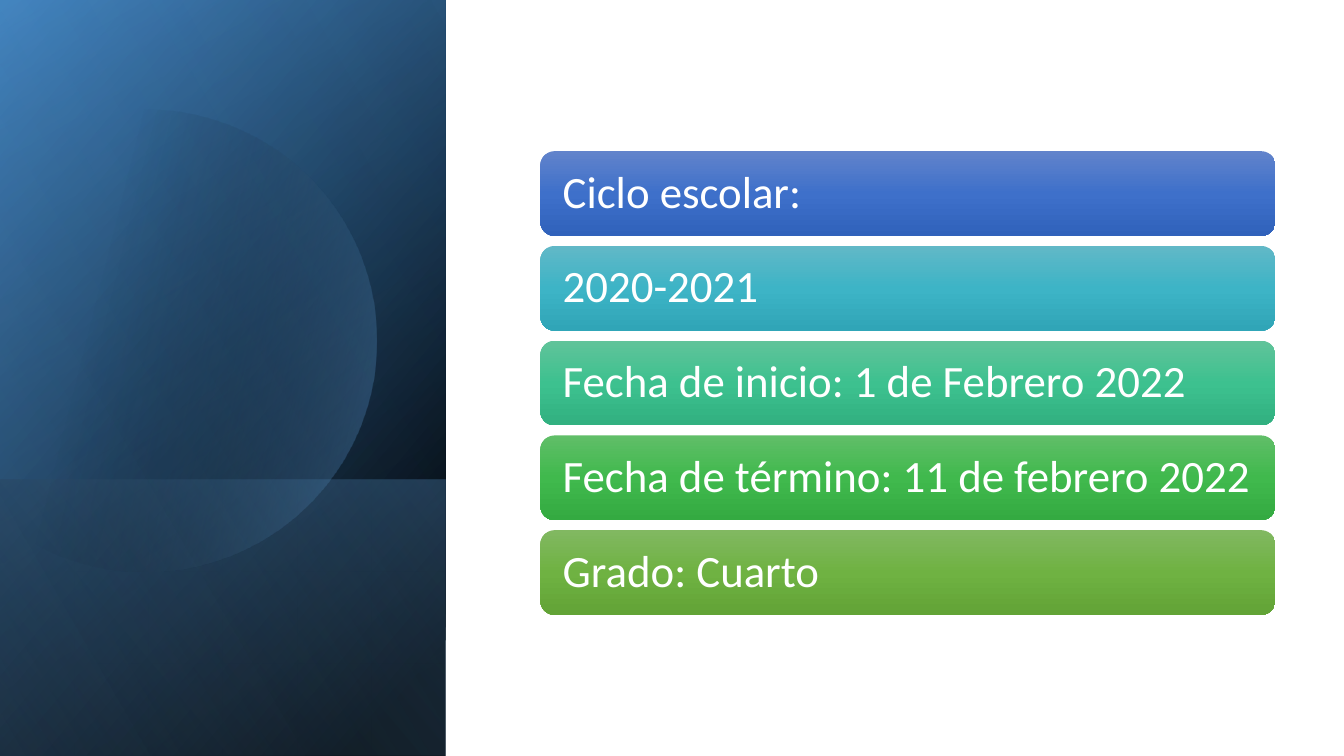
import math
from lxml import etree
from pptx import Presentation
from pptx.dml.color import RGBColor
from pptx.enum.shapes import MSO_SHAPE
from pptx.enum.text import MSO_ANCHOR, PP_ALIGN
from pptx.oxml.ns import qn
from pptx.util import Inches, Pt

RECT, ROUNDED = MSO_SHAPE.RECTANGLE, MSO_SHAPE.ROUNDED_RECTANGLE
MIDDLE, LEFT = MSO_ANCHOR.MIDDLE, PP_ALIGN.LEFT

# Content: bar text and its gradient colours, top to bottom
BARS = [
    ("Ciclo escolar:", ("6183CB", "3E70CA", "3062BB")),
    ("2020-2021", ("61B8C7", "3DB4C6", "30A5B7")),
    ("Fecha de inicio: 1 de Febrero 2022", ("60C39A", "3DC18F", "31B080")),
    ("Fecha de término: 11 de febrero 2022", ("60BE68", "40B94D", "34AA41")),
    ("Grado: Cuarto", ("81B861", "6FB242", "62A336")),
]

# Side panel gradients: angle, then stops of (position %, colour, opacity %)
BASE = (220, [(8, "000000", 100), (100, "2E75B6", 100)])
GLOW = (240, [(0, "000000", 0), (99, "5B9BD5", 46)])
FLOOR = (140, [(2, "5B9BD5", 29), (100, "000000", 30)])
DISC = (14, [(29, "000000", 0), (100, "5B9BD5", 43)])
SHEEN = (150, [(0, "000000", 0), (99, "9DC3E6", 11)])

# Layout in inches
SLIDE_W, SLIDE_H = 13.33, 7.5
PANEL_W, FLOOR_TOP = 4.42, 4.76
DISC_X, DISC_Y, DISC_R = 1.44, 3.38, 2.29
BAR_LEFT, BAR_TOP, BAR_W, BAR_H, BAR_STEP = 5.36, 1.5, 7.29, 0.84, 0.94


def rgb(colour):
    return RGBColor.from_string(colour)


def paint(shape, angle, stops):
    """Fill a shape with a linear gradient and remove its line and shadow."""
    shape.shadow.inherit = False
    shape.line.fill.background()
    shape.fill.solid()
    solid = shape.fill._xPr.find(qn("a:solidFill"))
    gradient = etree.Element(qn("a:gradFill"), rotWithShape="1")
    stop_list = etree.SubElement(gradient, qn("a:gsLst"))
    for position, colour, opacity in stops:
        stop = etree.SubElement(stop_list, qn("a:gs"), pos=str(position * 1000))
        tone = etree.SubElement(stop, qn("a:srgbClr"), val=colour)
        if opacity < 100:
            etree.SubElement(tone, qn("a:alpha"), val=str(opacity * 1000))
    etree.SubElement(gradient, qn("a:lin"), ang=str(angle * 60000), scaled="0")
    solid.getparent().replace(solid, gradient)


def add_block(kind, left, top, width, height, gradient):
    block = slide.shapes.add_shape(
        kind, Inches(left), Inches(top), Inches(width), Inches(height))
    paint(block, *gradient)
    return block


def write(shape, text, size=32, font="Calibri", colour="FFFFFF", inset=0.18):
    frame = shape.text_frame
    frame.word_wrap = True
    frame.vertical_anchor = MIDDLE
    frame.margin_left = frame.margin_right = Inches(inset)
    paragraph = frame.paragraphs[0]
    paragraph.alignment = LEFT
    paragraph.line_spacing = 0.9
    run = paragraph.add_run()
    run.text = text
    run.font.size, run.font.name = Pt(size), font
    run.font.color.rgb = rgb(colour)


def add_disc():
    """Draw the disc, cut off by the slide's left edge."""
    reach = math.acos(-DISC_X / DISC_R)
    steps = 90
    angles = [reach * (2 * i / steps - 1) for i in range(steps + 1)]
    rim = [(Inches(DISC_X + DISC_R * math.cos(a)),
            Inches(DISC_Y + DISC_R * math.sin(a))) for a in angles]
    builder = slide.shapes.build_freeform(*rim[0])
    builder.add_line_segments(rim[1:], close=True)
    paint(builder.convert_to_shape(), *DISC)


prs = Presentation()
prs.slide_width, prs.slide_height = Inches(SLIDE_W), Inches(SLIDE_H)
slide = prs.slides.add_slide(prs.slide_layouts[6])

# Side panel, back to front
add_block(RECT, 0, 0, PANEL_W, SLIDE_H, BASE)
add_block(RECT, 0, 0, PANEL_W, SLIDE_H, GLOW)
add_block(RECT, 0, FLOOR_TOP, PANEL_W, SLIDE_H - FLOOR_TOP, FLOOR)
add_disc()
add_block(RECT, 0, 0, PANEL_W, SLIDE_H, SHEEN)

# Bars
for row, (label, colours) in enumerate(BARS):
    stops = [(50 * i, colour, 100) for i, colour in enumerate(colours)]
    bar = add_block(ROUNDED, BAR_LEFT, BAR_TOP + row * BAR_STEP, BAR_W, BAR_H,
                    (90, stops))
    write(bar, label)

prs.save("out.pptx")
